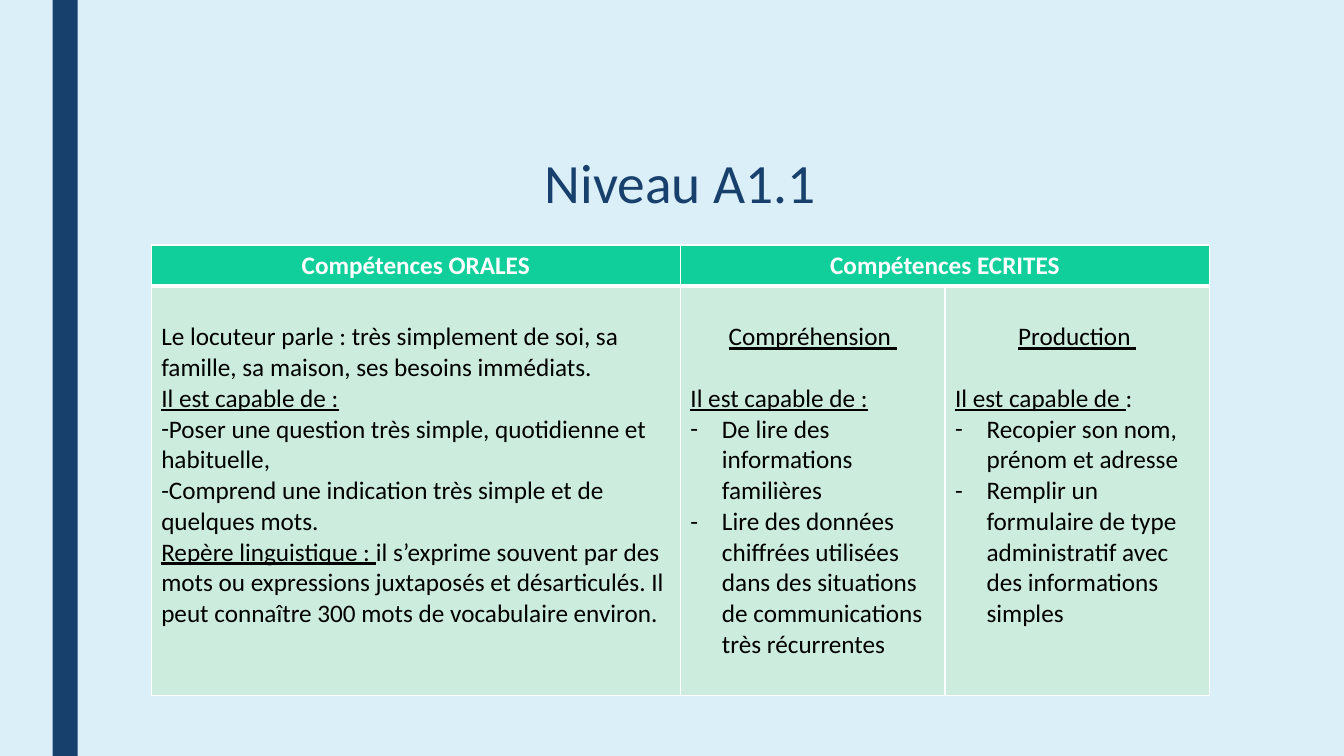
from dataclasses import dataclass

from lxml import etree
from pptx import Presentation
from pptx.dml.color import RGBColor
from pptx.enum.shapes import MSO_SHAPE
from pptx.enum.text import MSO_ANCHOR, MSO_AUTO_SIZE, PP_ALIGN
from pptx.oxml.ns import qn
from pptx.util import Pt

RECT = MSO_SHAPE.RECTANGLE
TOP, BOTTOM = MSO_ANCHOR.TOP, MSO_ANCHOR.BOTTOM
LEFT, CENTER = PP_ALIGN.LEFT, PP_ALIGN.CENTER
NO_FIT = MSO_AUTO_SIZE.NONE


@dataclass(frozen=True)
class Theme:
    font: str = "Calibri"
    background: str = "DBEFF9"
    navy: str = "17406D"
    header: str = "10CF9B"
    body: str = "CCEDDE"
    white: str = "FFFFFF"
    black: str = "000000"
    title_size: float = 39.6
    text_size: float = 18
    line: float = 22
    thin: float = 1
    thick: float = 3


@dataclass(frozen=True)
class Para:
    """A paragraph of (text, underlined) runs; indent=None means no bullet."""
    runs: tuple
    align: int = LEFT
    indent: float = None
    after: float = 0


class SlideBuilder:
    def __init__(self, prs, theme):
        self.theme = theme
        self.s = prs.slides.add_slide(prs.slide_layouts[5])
        fill = self.s.background.fill
        fill.solid()
        fill.fore_color.rgb = RGBColor.from_string(theme.background)

    def bar(self, x, y, w, h, color):
        sp = self.s.shapes.add_shape(RECT, Pt(x), Pt(y), Pt(w), Pt(h))
        sp.shadow.inherit = False
        sp.fill.solid()
        sp.fill.fore_color.rgb = RGBColor.from_string(color)
        sp.line.fill.background()

    def run(self, p, text, size, color, bold=False, underline=False):
        r = p.add_run()
        r.text = text
        r.font.name = self.theme.font
        r.font.size = Pt(size)
        r.font.color.rgb = RGBColor.from_string(color)
        r.font.bold = bold
        r.font.underline = underline

    def title(self, text, x, y, w, h):
        sp = self.s.shapes.title
        sp.left, sp.top, sp.width, sp.height = Pt(x), Pt(y), Pt(w), Pt(h)
        tf = sp.text_frame
        tf.word_wrap = True
        tf.auto_size = NO_FIT
        tf.vertical_anchor = BOTTOM
        tf.margin_bottom = 0
        p = tf.paragraphs[0]
        p.alignment = CENTER
        p.line_spacing = 0.89
        self.run(p, text, self.theme.title_size, self.theme.navy)

    def bullet(self, p, indent):
        pPr = p._p.get_or_add_pPr()
        pPr.set("marL", str(Pt(indent)))
        pPr.set("indent", str(-Pt(indent)))
        etree.SubElement(pPr, qn("a:buFont")).set("typeface", self.theme.font)
        etree.SubElement(pPr, qn("a:buChar")).set("char", "-")

    def fill_cell(self, cell, paras, color, bold=False):
        tf = cell.text_frame
        for i, para in enumerate(paras):
            p = tf.add_paragraph() if i else tf.paragraphs[0]
            p.alignment = para.align
            p.space_after = Pt(para.after)
            if para.indent is not None:
                self.bullet(p, para.indent)
            for text, underline in para.runs:
                self.run(p, text, self.theme.text_size, color, bold, underline)

    def borders(self, cell, widths):
        tcPr = cell._tc.get_or_add_tcPr()
        for side, width in widths.items():
            ln = etree.SubElement(tcPr, qn(f"a:ln{side}"), w=str(Pt(width)))
            fill = etree.SubElement(ln, qn("a:solidFill"))
            etree.SubElement(fill, qn("a:srgbClr"), val=self.theme.white)

    def table(self, x, y, cols, rows, headers, bodies):
        t = self.theme
        frame = self.s.shapes.add_table(len(rows), len(cols), Pt(x), Pt(y),
                                        Pt(sum(cols)), Pt(sum(rows)))
        tbl = frame.table
        tbl.first_row = tbl.horz_banding = False
        for col, width in zip(tbl.columns, cols):
            col.width = Pt(width)
        for row, height in zip(tbl.rows, rows):
            row.height = Pt(height)

        # Header row above, body row below a thick rule
        for c in range(len(cols)):
            for r, color in enumerate((t.header, t.body)):
                cell = tbl.cell(r, c)
                self.borders(cell, {"L": t.thin, "R": t.thin,
                                    "T": t.thick if r else t.thin,
                                    "B": t.thin if r else t.thick})
                cell.fill.solid()
                cell.fill.fore_color.rgb = RGBColor.from_string(color)
                cell.vertical_anchor = TOP
        for first, last, text in headers:
            if last > first:
                tbl.cell(0, first).merge(tbl.cell(0, last))
            para = Para(((text, False),), CENTER)
            self.fill_cell(tbl.cell(0, first), [para], t.white, bold=True)
        for c, paras in enumerate(bodies):
            cell = tbl.cell(1, c)
            cell.margin_top = Pt(3.6 + t.line)
            self.fill_cell(cell, paras, t.black)


def plain(text):
    return Para(((text, False),))


def underlined(text):
    return Para(((text, True),))


def item(text, indent=22.5):
    return Para(((text, False),), indent=indent)


def main():
    theme = Theme()
    prs = Presentation()
    prs.slide_width, prs.slide_height = Pt(960), Pt(540)
    slide = SlideBuilder(prs, theme)

    # Side bar and title
    slide.bar(37.5, 0, 18, 540, theme.navy)
    slide.title("Niveau A1.1", 108, 20, 756, 134)

    # Skills table
    oral = [
        plain("Le locuteur parle : très simplement de soi, sa famille, "
              "sa maison, ses besoins immédiats."),
        underlined("Il est capable de :"),
        item("Poser une question très simple, quotidienne et habituelle,", 0),
        item("Comprend une indication très simple et de quelques mots.", 0),
        Para((("Repère linguistique : ", True),
              ("il s’exprime souvent par des mots ou expressions juxtaposés "
               "et désarticulés. Il peut connaître 300 mots de vocabulaire "
               "environ.", False))),
    ]
    reading = [
        Para((("Compréhension ", True),), CENTER, after=theme.line),
        underlined("Il est capable de :"),
        item("De lire des informations familières"),
        item("Lire des données chiffrées utilisées dans des situations "
             "de communications très récurrentes"),
    ]
    writing = [
        Para((("Production ", True),), CENTER, after=theme.line),
        Para((("Il est capable de ", True), (":", False))),
        item("Recopier son nom, prénom et adresse"),
        item("Remplir un formulaire de type administratif avec des "
             "informations simples"),
    ]
    slide.table(108, 175, (378, 189, 189), (29.2, 292.8),
                ((0, 0, "Compétences ORALES"), (1, 2, "Compétences ECRITES")),
                (oral, reading, writing))
    prs.save("out.pptx")


if __name__ == "__main__":
    main()
